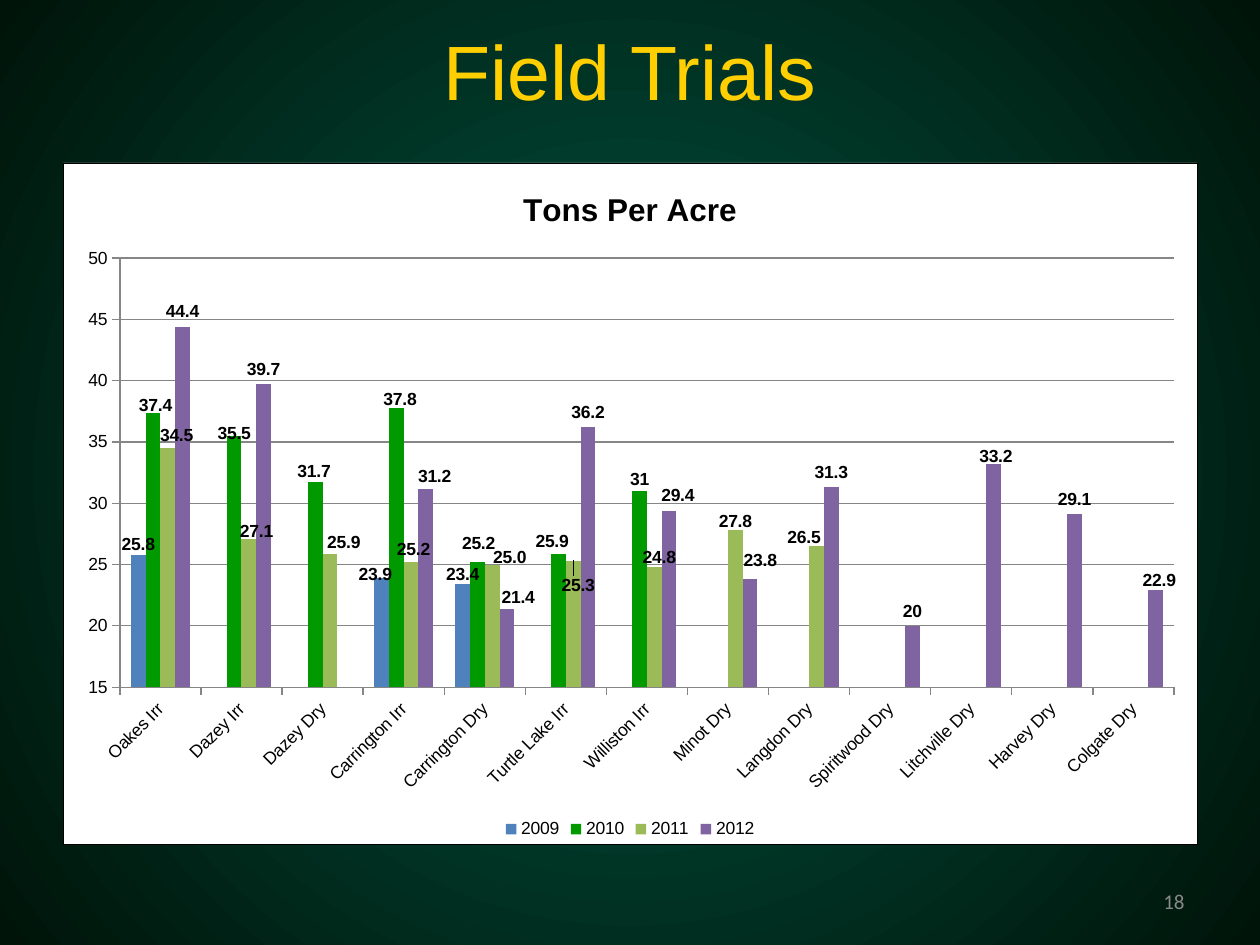
"""Build the Field Trials slide with its clustered column chart."""
import pptx
import pptx.chart.data
import pptx.dml.color
import pptx.enum.chart
import pptx.enum.text
import pptx.oxml
import pptx.oxml.ns
import pptx.util

RGBColor = pptx.dml.color.RGBColor
Inches = pptx.util.Inches
Pt = pptx.util.Pt
qn = pptx.oxml.ns.qn
ALIGN = pptx.enum.text.PP_ALIGN

GOLD = RGBColor(0xFF, 0xCF, 0x01)
GREY = RGBColor(0x89, 0x89, 0x89)
LINE_GREY = RGBColor(0x86, 0x86, 0x86)
BLACK = RGBColor(0, 0, 0)
GLOW = RGBColor(0x00, 0x56, 0x43)
EDGE = RGBColor(0x00, 0x14, 0x09)

CHART_LEFT, CHART_TOP, CHART_WIDTH, CHART_HEIGHT = 0.5, 1.29, 9, 5.41
PLOT_FRAME = {"x": 0.05, "y": 0.14, "w": 0.93, "h": 0.63}

SITES = ["Oakes Irr", "Dazey Irr", "Dazey Dry", "Carrington Irr", "Carrington Dry",
         "Turtle Lake Irr", "Williston Irr", "Minot Dry", "Langdon Dry",
         "Spiritwood Dry", "Litchville Dry", "Harvey Dry", "Colgate Dry"]

# Label shifts are inches right and down, keyed by site.
YEARS = [
    {"year": "2009", "color": RGBColor(0x4F, 0x81, 0xBD), "format": "General",
     "tons": [25.8, None, None, 23.9, 23.4] + [None] * 8,
     "shifts": {0: (0, 0.04), 3: (-0.05, 0.09), 4: (0, 0.04)}},
    {"year": "2010", "color": RGBColor(0x00, 0x99, 0x00), "format": "General",
     "tons": [37.4, 35.5, 31.7, 37.8, 25.2, 25.9, 31] + [None] * 6,
     "shifts": {0: (0.02, 0.06), 1: (0, 0.1), 2: (-0.01, 0.03), 3: (0.03, 0.05),
                4: (0.01, -0.03), 5: (-0.05, 0.02), 6: (0, 0.03)}},
    {"year": "2011", "color": RGBColor(0x9B, 0xBB, 0x59), "format": "0.0",
     "tons": [34.5, 27.1, 25.9, 25.2, 25, 25.3, 24.8, 27.8, 26.5] + [None] * 4,
     "shifts": {0: (0.07, 0.02), 1: (0.06, 0.06), 2: (0.11, 0.03), 3: (0.02, 0.02),
                4: (0.14, 0.06), 5: (0.04, 0.31), 6: (0.04, 0.04), 7: (0, 0.05),
                8: (-0.1, 0.05)}},
    {"year": "2012", "color": RGBColor(0x80, 0x64, 0xA2), "format": "General",
     "tons": [44.4, 39.7, None, 31.2, 21.4, 36.2, 29.4, 23.8, 31.3, 20, 33.2, 29.1, 22.9],
     "shifts": {3: (0.07, 0.02), 4: (0.09, 0.03), 6: (0.07, 0), 7: (0.08, -0.03),
                10: (0.02, 0.06), 12: (0.03, 0.04)}},
]


def write(frame, text, size=10, font="Arial", color=BLACK, align=ALIGN.CENTER, bold=False):
    frame.word_wrap = True
    frame.vertical_anchor = pptx.enum.text.MSO_ANCHOR.MIDDLE
    paragraph = frame.paragraphs[0]
    paragraph.alignment = align
    run = paragraph.add_run()
    run.text = text
    run.font.size, run.font.name, run.font.bold = Pt(size), font, bold
    run.font.color.rgb = color


def chart_xml(tag, inner="", attributes=""):
    spaces = pptx.oxml.ns.nsdecls("c", "a")
    return pptx.oxml.parse_xml(f"<c:{tag} {spaces} {attributes}>{inner}</c:{tag}>")


def manual_layout(modes="", **values):
    fields = "".join(f'<c:{name} val="{value:.4f}"/>' for name, value in values.items())
    return chart_xml("layout", f"<c:manualLayout>{modes}{fields}</c:manualLayout>")


def paint_background(slide):
    fill = slide.background.fill
    fill.gradient()
    for stop, color in zip(fill.gradient_stops, (GLOW, EDGE)):
        stop.color.rgb = color
    gradient = slide.element.find(".//" + qn("a:gradFill"))
    gradient.replace(gradient.find(qn("a:lin")), pptx.oxml.parse_xml(
        f'<a:path {pptx.oxml.ns.nsdecls("a")} path="circle">'
        '<a:fillToRect l="50000" t="50000" r="50000" b="50000"/></a:path>'))


def label_bars(series, entry):
    outside = pptx.enum.chart.XL_LABEL_POSITION.OUTSIDE_END
    labels = series.data_labels
    labels.show_value = True
    labels.position = outside
    labels.number_format = entry["format"]
    labels.number_format_is_linked = False
    labels.font.bold, labels.font.size = True, Pt(10)
    for site, (right, down) in entry["shifts"].items():
        label = series.points[site].data_label
        label.position = outside
        label.font.bold, label.font.size = True, Pt(10)
    for node in series.data_labels._element.findall(qn("c:dLbl")):
        index = node.find(qn("c:idx"))
        right, down = entry["shifts"][int(index.get("val"))]
        index.addnext(chart_xml("numFmt", attributes=f'formatCode="{entry["format"]}" sourceLinked="0"'))
        index.addnext(manual_layout(x=right / CHART_WIDTH, y=down / CHART_HEIGHT))


def add_yield_chart(slide):
    data = pptx.chart.data.CategoryChartData()
    data.categories = SITES
    for entry in YEARS:
        data.add_series(entry["year"], entry["tons"])
    chart = slide.shapes.add_chart(
        pptx.enum.chart.XL_CHART_TYPE.COLUMN_CLUSTERED, Inches(CHART_LEFT), Inches(CHART_TOP),
        Inches(CHART_WIDTH), Inches(CHART_HEIGHT), data).chart
    chart.font.size, chart.font.name = Pt(10), "Arial"
    chart.font.color.rgb = BLACK
    chart.has_title = True
    write(chart.chart_title.text_frame, "Tons Per Acre", size=18, bold=True)
    chart.chart_title.include_in_layout = False
    chart.has_legend = True
    chart.legend.position = pptx.enum.chart.XL_LEGEND_POSITION.BOTTOM
    chart.legend.include_in_layout = False

    tons_axis, site_axis = chart.value_axis, chart.category_axis
    tons_axis.minimum_scale, tons_axis.maximum_scale, tons_axis.major_unit = 15, 50, 5
    tons_axis.has_major_gridlines = True
    for line in (tons_axis.format.line, site_axis.format.line, tons_axis.major_gridlines.format.line):
        line.color.rgb, line.width = LINE_GREY, Pt(0.75)
    for axis in (tons_axis, site_axis):
        axis.major_tick_mark = pptx.enum.chart.XL_TICK_MARK.OUTSIDE
        axis.tick_labels.font.size = Pt(10)
    site_axis._element.find(qn("c:txPr")).find(qn("a:bodyPr")).set("rot", "-2700000")

    bars = chart.plots[0]
    bars.gap_width, bars.overlap, bars.vary_by_categories = 150, 0, False
    for series, entry in zip(bars.series, YEARS):
        series.format.fill.solid()
        series.format.fill.fore_color.rgb = entry["color"]
        series.invert_if_negative = False
        label_bars(series, entry)

    chart_node = chart.element.find(qn("c:chart"))
    plot_area = chart_node.find(qn("c:plotArea"))
    for layout in plot_area.findall(qn("c:layout")):
        plot_area.remove(layout)
    modes = '<c:layoutTarget val="inner"/><c:xMode val="edge"/><c:yMode val="edge"/>'
    plot_area.insert(0, manual_layout(modes, **PLOT_FRAME))
    chart_node.addnext(chart_xml(
        "spPr", '<a:solidFill><a:srgbClr val="FFFFFF"/></a:solidFill>'
        '<a:ln w="3175"><a:solidFill><a:srgbClr val="000000"/></a:solidFill></a:ln>'))


def main():
    deck = pptx.Presentation()
    deck.slide_width, deck.slide_height = Inches(10), Inches(7.5)
    slide = deck.slides.add_slide(deck.slide_layouts[5])
    paint_background(slide)
    title = slide.shapes.title
    title.left, title.top, title.width, title.height = map(Inches, (0.5, 0.3, 9, 0.51))
    write(title.text_frame, "Field Trials", size=44, color=GOLD)
    add_yield_chart(slide)
    page = slide.shapes.add_textbox(*map(Inches, (7.17, 6.95, 2.33, 0.4)))
    write(page.text_frame, "18", size=12, font="Calibri", color=GREY, align=ALIGN.RIGHT)
    deck.save("out.pptx")


if __name__ == "__main__":
    main()
